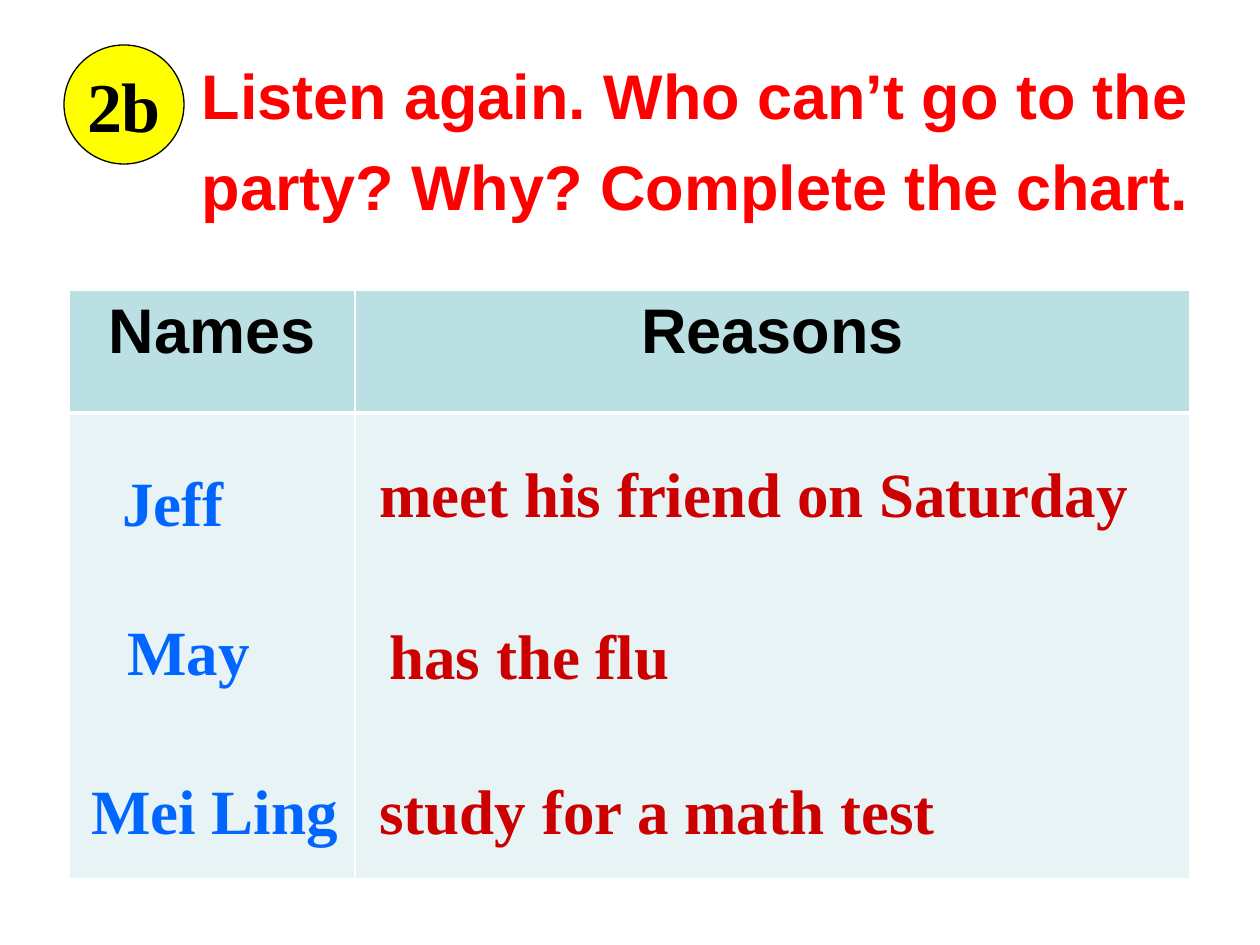
from dataclasses import dataclass

from lxml import etree
from pptx import Presentation
from pptx.dml.color import RGBColor
from pptx.enum.shapes import MSO_SHAPE
from pptx.enum.text import MSO_ANCHOR, MSO_AUTO_SIZE, PP_ALIGN
from pptx.oxml.ns import qn
from pptx.util import Emu, Pt

OVAL = MSO_SHAPE.OVAL
TOP, MIDDLE = MSO_ANCHOR.TOP, MSO_ANCHOR.MIDDLE
LEFT, CENTER = PP_ALIGN.LEFT, PP_ALIGN.CENTER
FIT_SHAPE = MSO_AUTO_SIZE.SHAPE_TO_FIT_TEXT

RED = RGBColor(0xFF, 0x00, 0x00)
DARK_RED = RGBColor(0xCC, 0x00, 0x00)
BLUE = RGBColor(0x00, 0x66, 0xFF)
YELLOW = RGBColor(0xFF, 0xFF, 0x00)
BLACK = RGBColor(0x00, 0x00, 0x00)
WHITE = RGBColor(0xFF, 0xFF, 0xFF)
HEADER_FILL = RGBColor(0xBB, 0xE0, 0xE3)
BODY_FILL = RGBColor(0xE7, 0xF3, 0xF4)

SANS, SERIF = "Arial", "Times New Roman"
PX_PER_INCH = 126
ANSWER_HEIGHT = 103


@dataclass(frozen=True)
class Answer:
    text: str
    left: int
    top: int
    width: int
    color: RGBColor


ANSWERS = [
    Answer("Jeff", 110, 442, 208, BLUE),
    Answer("meet his friend on Saturday", 367, 433, 848, DARK_RED),
    Answer("May", 115, 591, 149, BLUE),
    Answer("has the flu", 377, 595, 615, DARK_RED),
    Answer("Mei Ling", 79, 750, 277, BLUE),
    Answer("study for a math test", 367, 750, 694, DARK_RED),
]
HEADINGS = ["Names", "Reasons"]
COLUMN_WIDTHS = [286, 835]
ROW_HEIGHTS = [123, 466]


def px(length: int) -> Emu:
    return Emu(round(length * 914400 / PX_PER_INCH))


def box(left: int, top: int, width: int, height: int) -> tuple[Emu, ...]:
    return px(left), px(top), px(width), px(height)


def style_paragraph(paragraph, font_name: str, size: int, color: RGBColor,
                    alignment=LEFT, line_spacing: float = 1.0) -> None:
    paragraph.alignment = alignment
    paragraph.line_spacing = line_spacing
    font = paragraph.font
    font.name, font.size, font.bold = font_name, Pt(size), True
    font.color.rgb = color


def add_title(slide) -> None:
    title = slide.shapes.title
    title.left, title.top, title.width, title.height = box(189, 35, 1037, 194)
    frame = title.text_frame
    frame.text = "Listen again. Who can’t go to the party? Why? Complete the chart."
    frame.vertical_anchor, frame.auto_size = TOP, FIT_SHAPE
    style_paragraph(frame.paragraphs[0], SANS, 36, RED, line_spacing=1.2)


def add_badge(slide) -> None:
    badge = slide.shapes.add_shape(OVAL, *box(64, 45, 120, 119))
    badge.shadow.inherit = False
    badge.fill.solid()
    badge.fill.fore_color.rgb = YELLOW
    badge.line.color.rgb = BLACK
    badge.line.width = Pt(0.75)
    frame = badge.text_frame
    frame.text = "2b"
    frame.word_wrap, frame.vertical_anchor = False, MIDDLE
    style_paragraph(frame.paragraphs[0], SERIF, 40, BLACK, CENTER)


def set_borders(cell, top: int, bottom: int) -> None:
    """Draw white borders: 1 pt at the sides, the given points above and below."""
    properties = cell._tc.get_or_add_tcPr()
    widths = {"a:lnL": 1, "a:lnR": 1, "a:lnT": top, "a:lnB": bottom}
    for position, (tag, width) in enumerate(widths.items()):
        border = etree.Element(qn(tag), w=str(Pt(width)))
        fill = etree.SubElement(border, qn("a:solidFill"))
        etree.SubElement(fill, qn("a:srgbClr"), val=str(WHITE))
        properties.insert(position, border)


def add_chart_table(slide) -> None:
    table = slide.shapes.add_table(
        len(ROW_HEIGHTS), len(COLUMN_WIDTHS),
        *box(69, 290, sum(COLUMN_WIDTHS), sum(ROW_HEIGHTS))).table
    for row, height in zip(table.rows, ROW_HEIGHTS):
        row.height = px(height)
    for index, (heading, width) in enumerate(zip(HEADINGS, COLUMN_WIDTHS)):
        table.columns[index].width = px(width)
        header, body = table.cell(0, index), table.cell(1, index)
        header.text = heading
        style_paragraph(header.text_frame.paragraphs[0], SANS, 36, BLACK, CENTER)
        for cell, color in ((header, HEADER_FILL), (body, BODY_FILL)):
            cell.fill.solid()
            cell.fill.fore_color.rgb = color
        set_borders(header, top=1, bottom=3)
        set_borders(body, top=3, bottom=1)


def add_answer(slide, answer: Answer) -> None:
    frame = slide.shapes.add_textbox(
        *box(answer.left, answer.top, answer.width, ANSWER_HEIGHT)).text_frame
    frame.text = answer.text
    frame.word_wrap, frame.auto_size = True, FIT_SHAPE
    style_paragraph(frame.paragraphs[0], SERIF, 36, answer.color, line_spacing=1.2)


def main() -> None:
    presentation = Presentation()
    presentation.slide_width, presentation.slide_height = px(1260), px(945)
    slide = presentation.slides.add_slide(presentation.slide_layouts[5])
    add_title(slide)
    add_chart_table(slide)
    for answer in ANSWERS:
        add_answer(slide, answer)
    add_badge(slide)
    presentation.save("out.pptx")


if __name__ == "__main__":
    main()
